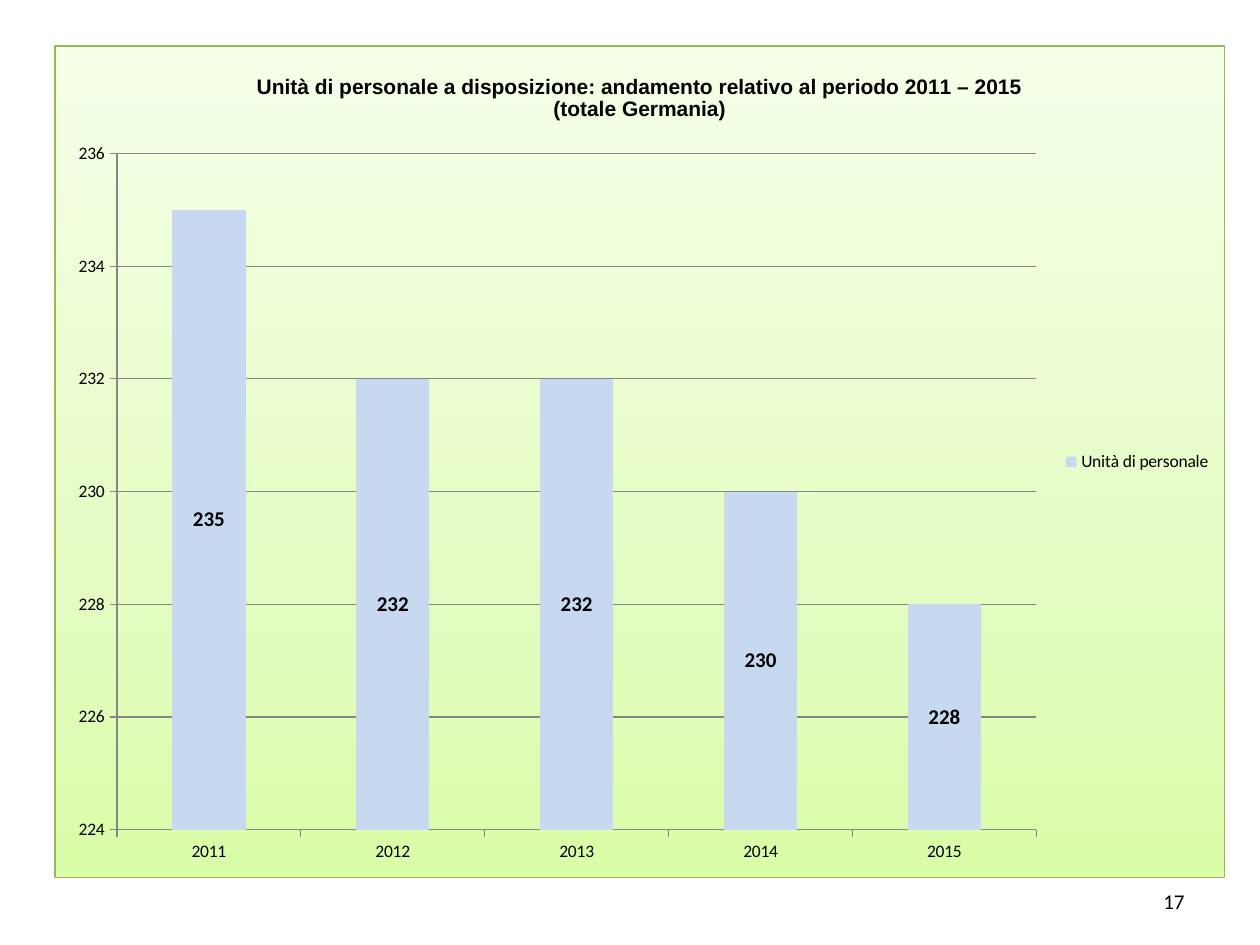
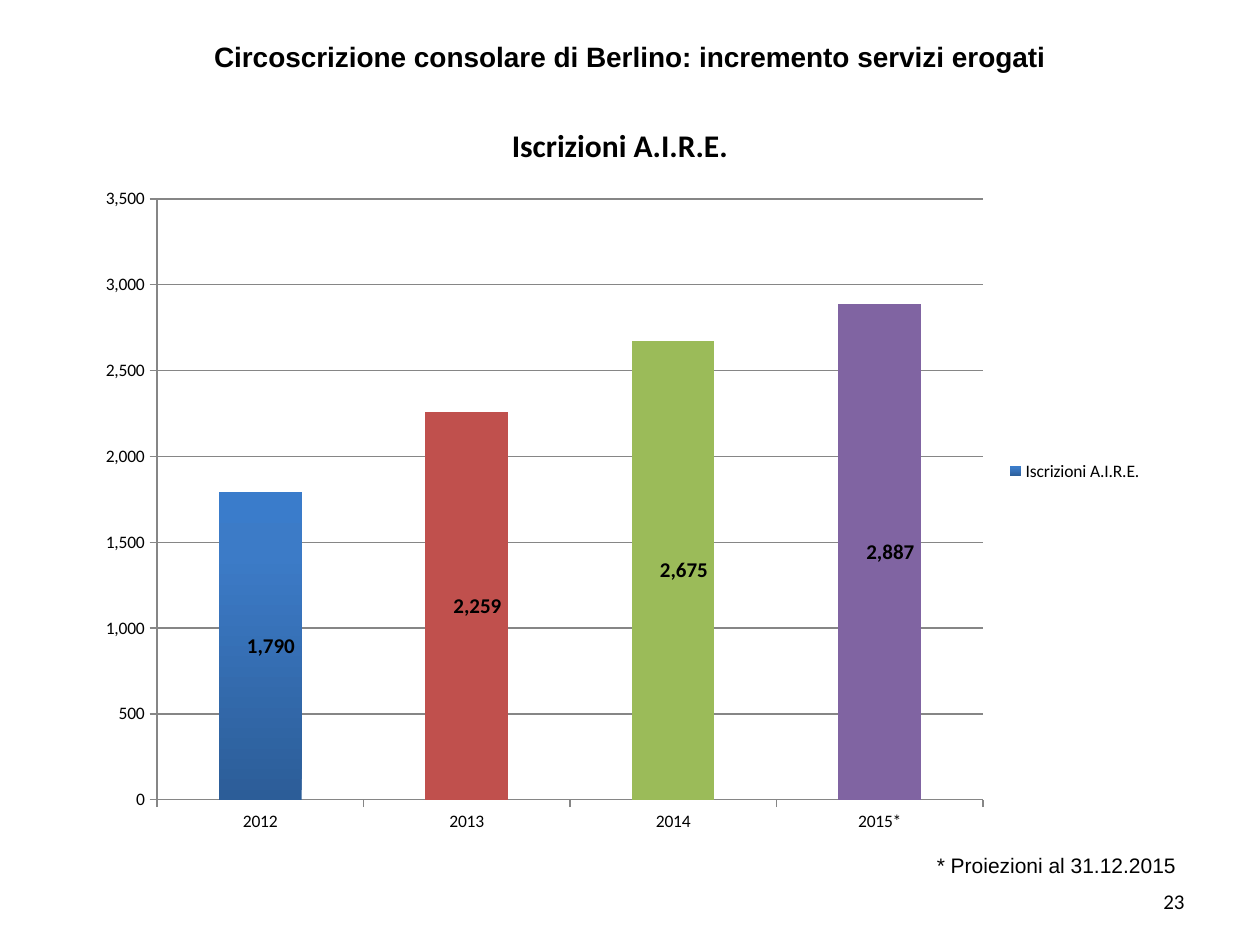
from dataclasses import dataclass

from lxml import etree
from pptx import Presentation
from pptx.chart.data import CategoryChartData
from pptx.dml.color import RGBColor
from pptx.enum.chart import XL_CHART_TYPE, XL_LEGEND_POSITION, XL_TICK_MARK
from pptx.enum.text import MSO_ANCHOR, MSO_AUTO_SIZE, PP_ALIGN
from pptx.oxml import parse_xml
from pptx.oxml.ns import nsdecls, qn
from pptx.util import Pt

COLUMN_STACKED = XL_CHART_TYPE.COLUMN_STACKED
LEGEND_RIGHT = XL_LEGEND_POSITION.RIGHT
TICK_OUTSIDE = XL_TICK_MARK.OUTSIDE
TICK_NONE = XL_TICK_MARK.NONE
ANCHOR_TOP, ANCHOR_MIDDLE = MSO_ANCHOR.TOP, MSO_ANCHOR.MIDDLE
CENTER, RIGHT = PP_ALIGN.CENTER, PP_ALIGN.RIGHT
NO_AUTOFIT = MSO_AUTO_SIZE.NONE
TITLE_ONLY, BLANK = 5, 6


@dataclass(frozen=True)
class Theme:
    heading_font: str = "Arial"
    body_font: str = "Calibri"
    text: str = "000000"
    grid: str = "868686"
    panel_border: str = "98B955"
    pale_bar: str = "C6D9F1"
    panel_gradient: tuple = ((0, "DAFDA7"), (35, "E4FCC2"), (100, "F5FFE7"))
    blue_gradient: tuple = ((0, "2C5D98"), (80, "3C7BC7"), (100, "3A7CCB"))
    point_colors: tuple = ("C0504D", "9BBB59", "8064A2")
    title_size: int = 16
    chart_title_size: int = 18
    note_size: int = 12
    axis_size: int = 10
    line_width: float = 0.75


THEME = Theme()
NUMBER_BOX = (516.24, 500.4, 167.76, 28.8)


def style_font(font, name, size, bold=False):
    font.name = name
    font.size = Pt(size)
    font.bold = bold
    font.color.rgb = RGBColor.from_string(THEME.text)


def place(shape, box):
    shape.left, shape.top, shape.width, shape.height = map(Pt, box)


def write_text(shape, text, font_name, size, alignment, anchor, bold=False):
    frame = shape.text_frame
    frame.word_wrap = True
    frame.auto_size = NO_AUTOFIT
    frame.vertical_anchor = anchor
    paragraph = frame.paragraphs[0]
    paragraph.alignment = alignment
    paragraph.space_before = Pt(0)
    run = paragraph.add_run()
    run.text = text
    style_font(run.font, font_name, size, bold)


def add_text(slide, box, *style):
    shape = slide.shapes.add_textbox(*map(Pt, box))
    write_text(shape, *style)


def add_slide_number(slide, number):
    add_text(slide, NUMBER_BOX, str(number), THEME.body_font, THEME.note_size, RIGHT, ANCHOR_MIDDLE)


def gradient_fill(stops):
    marks = "".join(
        f'<a:gs pos="{position * 1000}"><a:srgbClr val="{color}"/></a:gs>'
        for position, color in stops
    )
    return parse_xml(
        f'<a:gradFill {nsdecls("a")} rotWithShape="1"><a:gsLst>{marks}</a:gsLst>'
        '<a:lin ang="16200000" scaled="0"/></a:gradFill>'
    )


def manual_layout(**settings):
    layout = etree.Element(qn("c:layout"))
    manual = etree.SubElement(layout, qn("c:manualLayout"))
    for name, value in settings.items():
        etree.SubElement(manual, qn(f"c:{name}")).set("val", str(value))
    return layout


def set_plot_box(chart, box, plot_box):
    left, top, width, height = box
    plot_left, plot_top, plot_width, plot_height = plot_box
    plot_area = chart.element.find(qn("c:chart")).find(qn("c:plotArea"))
    for layout in plot_area.findall(qn("c:layout")):
        plot_area.remove(layout)
    plot_area.insert(0, manual_layout(
        layoutTarget="inner", xMode="edge", yMode="edge",
        x=plot_left / width, y=plot_top / height,
        w=plot_width / width, h=plot_height / height,
    ))


def set_chart_title(chart, lines, font_name, size):
    frame = chart.chart_title.text_frame
    for index, line in enumerate(lines):
        paragraph = frame.add_paragraph() if index else frame.paragraphs[0]
        style_font(paragraph.font, font_name, size, True)
        run = paragraph.add_run()
        run.text = line
        style_font(run.font, font_name, size, True)
    chart.chart_title.include_in_layout = False


def style_line(line, color):
    line.color.rgb = RGBColor.from_string(color)
    line.width = Pt(THEME.line_width)


def style_axes(chart, scale):
    value_axis = chart.value_axis
    value_axis.minimum_scale, value_axis.maximum_scale, value_axis.major_unit = scale
    value_axis.has_major_gridlines = True
    style_line(value_axis.major_gridlines.format.line, THEME.grid)
    for axis in (chart.category_axis, value_axis):
        axis.major_tick_mark = TICK_OUTSIDE
        axis.minor_tick_mark = TICK_NONE
        style_line(axis.format.line, THEME.grid)


def add_column_chart(slide, box, plot_box, name, categories, values, scale, number_format):
    data = CategoryChartData(number_format=number_format)
    data.categories = categories
    data.add_series(name, values)
    chart = slide.shapes.add_chart(COLUMN_STACKED, *map(Pt, box), data).chart
    style_font(chart.font, THEME.body_font, THEME.axis_size)
    chart.has_legend = True
    chart.legend.position = LEGEND_RIGHT
    chart.legend.include_in_layout = False
    style_axes(chart, scale)
    set_plot_box(chart, box, plot_box)
    plot = chart.plots[0]
    plot.gap_width = 150
    plot.overlap = 100
    plot.vary_by_categories = False
    labels = plot.series[0].data_labels
    labels.show_value = True
    labels.number_format = number_format
    labels.number_format_is_linked = False
    style_font(labels.font, THEME.body_font, THEME.note_size, True)
    return chart


def fill_panel(chart):
    properties = parse_xml(
        f'<c:spPr {nsdecls("c", "a")}><a:ln w="{Pt(THEME.line_width)}"><a:solidFill>'
        f'<a:srgbClr val="{THEME.panel_border}"/></a:solidFill></a:ln></c:spPr>'
    )
    properties.insert(0, gradient_fill(THEME.panel_gradient))
    chart.element.find(qn("c:chart")).addnext(properties)


def color_points(series):
    series.format.fill.background()
    properties = series.format.fill._xPr
    properties.replace(properties.find(qn("a:noFill")), gradient_fill(THEME.blue_gradient))
    for index, color in enumerate(THEME.point_colors, start=1):
        fill = series.points[index].format.fill
        fill.solid()
        fill.fore_color.rgb = RGBColor.from_string(color)


def shift_labels(series, count, offset):
    for index in range(count):
        style_font(series.points[index].data_label.font, THEME.body_font, THEME.note_size, True)
    for label in series.data_labels._element.findall(qn("c:dLbl")):
        label.find(qn("c:idx")).addnext(manual_layout(x=offset, y=0))


def build_staff_slide(presentation):
    slide = presentation.slides.add_slide(presentation.slide_layouts[BLANK])
    add_slide_number(slide, 17)
    chart = add_column_chart(
        slide, (31, 26, 669, 476), (35.5, 61.5, 526, 387), "Unità di personale",
        ("2011", "2012", "2013", "2014", "2015"), (235, 232, 232, 230, 228),
        (224, 236, 2), "General",
    )
    set_chart_title(chart, (
        "Unità di personale a disposizione: andamento relativo al periodo 2011 – 2015",
        "(totale Germania)",
    ), THEME.heading_font, THEME.note_size)
    fill_panel(chart)
    fill = chart.plots[0].series[0].format.fill
    fill.solid()
    fill.fore_color.rgb = RGBColor.from_string(THEME.pale_bar)


def build_registrations_slide(presentation):
    slide = presentation.slides.add_slide(presentation.slide_layouts[TITLE_ONLY])
    title = slide.shapes.title
    place(title, (8.64, 18.72, 702.72, 26.64))
    write_text(title, "Circoscrizione consolare di Berlino: incremento servizi erogati",
               THEME.heading_font, THEME.title_size, CENTER, ANCHOR_TOP, True)
    add_text(slide, (527, 483.84, 153.4, 21.6), "* Proiezioni al 31.12.2015",
             THEME.heading_font, THEME.note_size, CENTER, ANCHOR_TOP)
    add_slide_number(slide, 23)
    registrations = (1790, 2259, 2675, 2887)
    chart = add_column_chart(
        slide, (48.24, 54.72, 612, 429.12), (41.5, 59, 472, 343.4), "Iscrizioni A.I.R.E.",
        ("2012", "2013", "2014", "2015*"), registrations, (0, 3500, 500), "#,##0",
    )
    set_chart_title(chart, ("Iscrizioni A.I.R.E.",), THEME.body_font, THEME.chart_title_size)
    series = chart.plots[0].series[0]
    color_points(series)
    shift_labels(series, len(registrations), 0.01)


def main():
    presentation = Presentation()
    presentation.slide_width, presentation.slide_height = Pt(720), Pt(540)
    build_staff_slide(presentation)
    build_registrations_slide(presentation)
    presentation.save("out.pptx")


if __name__ == "__main__":
    main()
